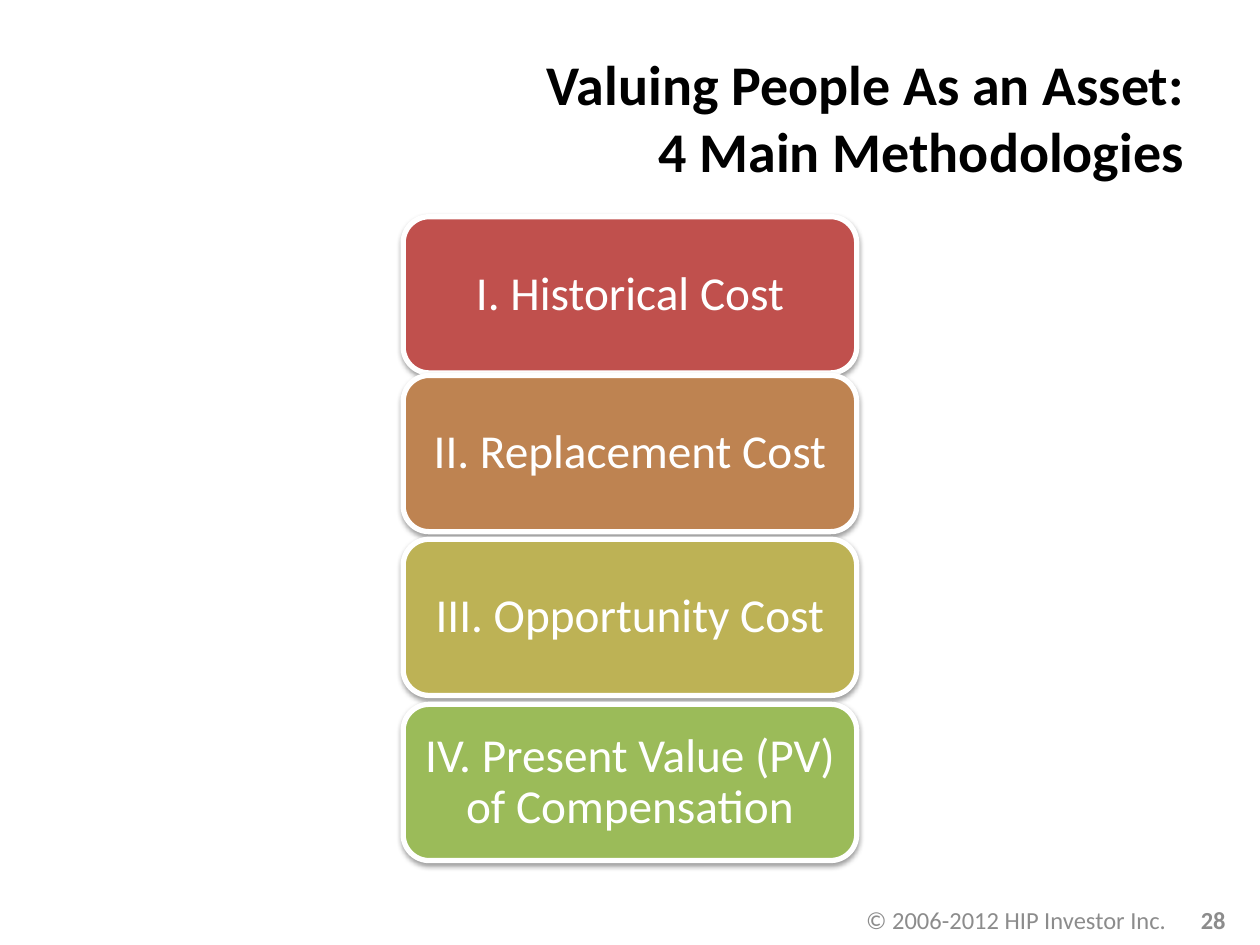
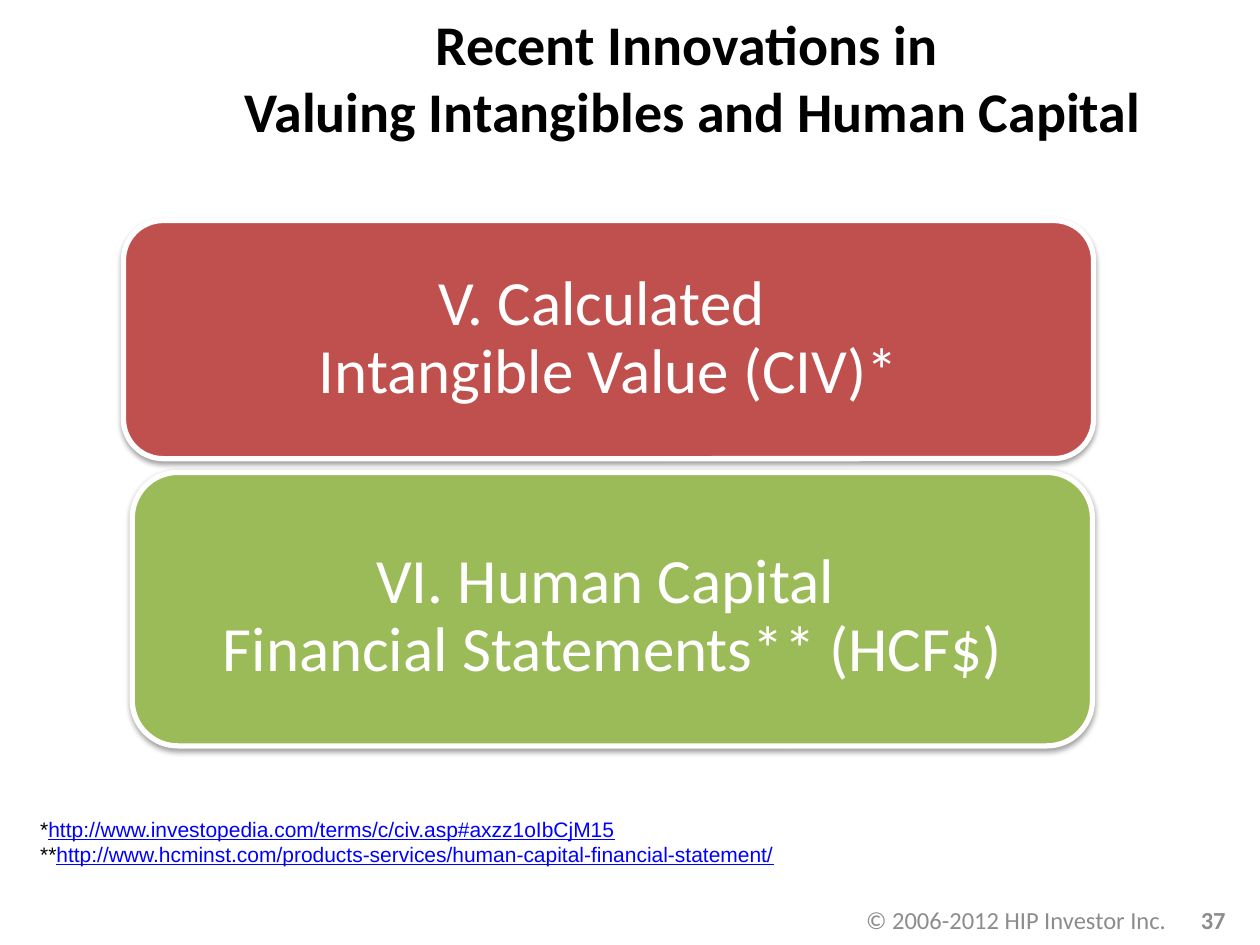
from dataclasses import dataclass

import pptx
import pptx.dml.color
import pptx.enum.shapes
import pptx.enum.text
import pptx.oxml
import pptx.oxml.ns
import pptx.util

ALIGN = pptx.enum.text.PP_ALIGN
ANCHOR = pptx.enum.text.MSO_ANCHOR


@dataclass(frozen=True)
class Theme:
    width: float = 10
    height: float = 7.5
    columns: int = 40
    rows: int = 30
    heading: str = "Calibri"
    notes: str = "Arial"
    black: str = "000000"
    white: str = "FFFFFF"
    gray: str = "8C8C8C"
    link: str = "0000FF"
    red: str = "C0504D"
    orange: str = "BE8351"
    yellow: str = "BDB255"
    green: str = "9BBB59"
    title_size: int = 32
    method_size: int = 27
    innovation_size: int = 36
    footer_size: int = 14
    note_size: int = 12
    outline: int = 3


THEME = Theme()
COPYRIGHT = "© 2006-2012 HIP Investor Inc."
SHADOW = (
    f'<a:effectLst {pptx.oxml.ns.nsdecls("a")}>'
    '<a:outerShdw blurRad="40000" dist="20000" dir="5400000" rotWithShape="0">'
    '<a:srgbClr val="000000"><a:alpha val="38000"/></a:srgbClr>'
    "</a:outerShdw></a:effectLst>"
)


def rgb(color):
    return pptx.dml.color.RGBColor.from_string(color)


def place(box):
    """Turn (column, row, columns, rows) into slide lengths."""
    cell_width = THEME.width / THEME.columns
    cell_height = THEME.height / THEME.rows
    steps = (cell_width, cell_height, cell_width, cell_height)
    return [pptx.util.Inches(n * step) for n, step in zip(box, steps)]


def style(font, size, color, name=THEME.heading, **extras):
    values = {"size": pptx.util.Pt(size), "name": name, **extras}
    for attribute, value in values.items():
        setattr(font, attribute, value)
    font.color.rgb = rgb(color)


def write(paragraph, text, **font):
    """Add runs to a paragraph, one for each line of the text."""
    for number, line in enumerate(text.split("\n")):
        if number:
            paragraph.add_line_break()
        run = paragraph.add_run()
        run.text = line
        style(run.font, **font)


def add_text(slide, box, anchor=ANCHOR.TOP):
    frame = slide.shapes.add_textbox(*place(box)).text_frame
    frame.word_wrap = True
    frame.vertical_anchor = anchor
    return frame


def add_title(slide, box, text, alignment):
    title = add_text(slide, box, ANCHOR.MIDDLE).paragraphs[0]
    title.alignment = alignment
    write(title, text, size=THEME.title_size, color=THEME.black, bold=True)


def add_footer(slide, box, number):
    frame = add_text(slide, box, ANCHOR.MIDDLE)
    frame.margin_right = pptx.util.Inches(0.05)
    footer = frame.paragraphs[0]
    # Right tabs line up the copyright and the page number
    tabs = pptx.oxml.parse_xml(f'<a:tabLst {pptx.oxml.ns.nsdecls("a")}/>')
    for stop in (3.33, 3.8):
        tab = pptx.oxml.parse_xml(f'<a:tab {pptx.oxml.ns.nsdecls("a")} algn="r"/>')
        tab.set("pos", str(pptx.util.Inches(stop)))
        tabs.append(tab)
    footer._p.get_or_add_pPr().append(tabs)
    for text, bold in ((f"\t{COPYRIGHT}", False), (f"\t{number}", True)):
        write(footer, text, size=THEME.footer_size, color=THEME.gray, bold=bold)


def add_card(slide, box, text, fill, size, top_margin=0.06):
    card = slide.shapes.add_shape(
        pptx.enum.shapes.MSO_SHAPE.ROUNDED_RECTANGLE, *place(box))
    card.fill.solid()
    card.fill.fore_color.rgb = rgb(fill)
    card.line.color.rgb = rgb(THEME.white)
    card.line.width = pptx.util.Pt(THEME.outline)
    card._element.spPr.append(pptx.oxml.parse_xml(SHADOW))
    frame = card.text_frame
    margins = {"left": 0.05, "right": 0.05, "top": top_margin, "bottom": 0.06}
    for side, margin in margins.items():
        setattr(frame, f"margin_{side}", pptx.util.Inches(margin))
    frame.word_wrap = True
    frame.vertical_anchor = ANCHOR.MIDDLE
    label = frame.paragraphs[0]
    label.alignment = ALIGN.CENTER
    label.line_spacing = 0.9
    write(label, text, size=size, color=THEME.white)


def add_footnotes(slide, box, addresses):
    frame = add_text(slide, box)
    for number, address in enumerate(addresses, start=1):
        note = frame.paragraphs[0] if number == 1 else frame.add_paragraph()
        shared = {"size": THEME.note_size, "name": THEME.notes}
        write(note, "*" * number, color=THEME.black, **shared)
        write(note, address, color=THEME.link, underline=True, **shared)


def new_slide(deck, number):
    slide = deck.slides.add_slide(deck.slide_layouts[6])
    add_footer(slide, (23.32, 28.4, 16, 1.6), number)
    return slide


def methodologies_slide(deck):
    slide = new_slide(deck, 28)
    add_title(slide, (2, 1.2, 36, 5),
              "Valuing People As an Asset:\n4 Main Methodologies", ALIGN.RIGHT)
    methods = (
        (6.88, "I. Historical Cost", THEME.red),
        (11.92, "II. Replacement Cost", THEME.orange),
        (17.12, "III. Opportunity Cost", THEME.yellow),
        (22.36, "IV. Present Value (PV) of Compensation", THEME.green),
    )
    for row, method, color in methods:
        add_card(slide, (12.8, row, 14.4, 4.96), method, color, THEME.method_size)


def innovations_slide(deck):
    slide = new_slide(deck, 37)
    add_title(slide, (4, 0, 36, 4.88),
              "Recent Innovations in \nValuing Intangibles and Human Capital",
              ALIGN.CENTER)
    add_card(slide, (3.92, 7, 30.8, 7.56),
             "V. Calculated \nIntangible Value (CIV)*",
             THEME.red, THEME.innovation_size)
    add_card(slide, (4.2, 15, 30.48, 8.68),
             "VI. Human Capital \nFinancial Statements** (HCF$)",
             THEME.green, THEME.innovation_size, top_margin=0.19)
    add_footnotes(slide, (0.88, 25.72, 37.24, 2), (
        "http://www.investopedia.com/terms/c/civ.asp#axzz1oIbCjM15",
        "http://www.hcminst.com/products-services/human-capital-financial-statement/",
    ))


def main():
    deck = pptx.Presentation()
    deck.slide_width = pptx.util.Inches(THEME.width)
    deck.slide_height = pptx.util.Inches(THEME.height)
    methodologies_slide(deck)
    innovations_slide(deck)
    deck.save("out.pptx")


if __name__ == "__main__":
    main()
